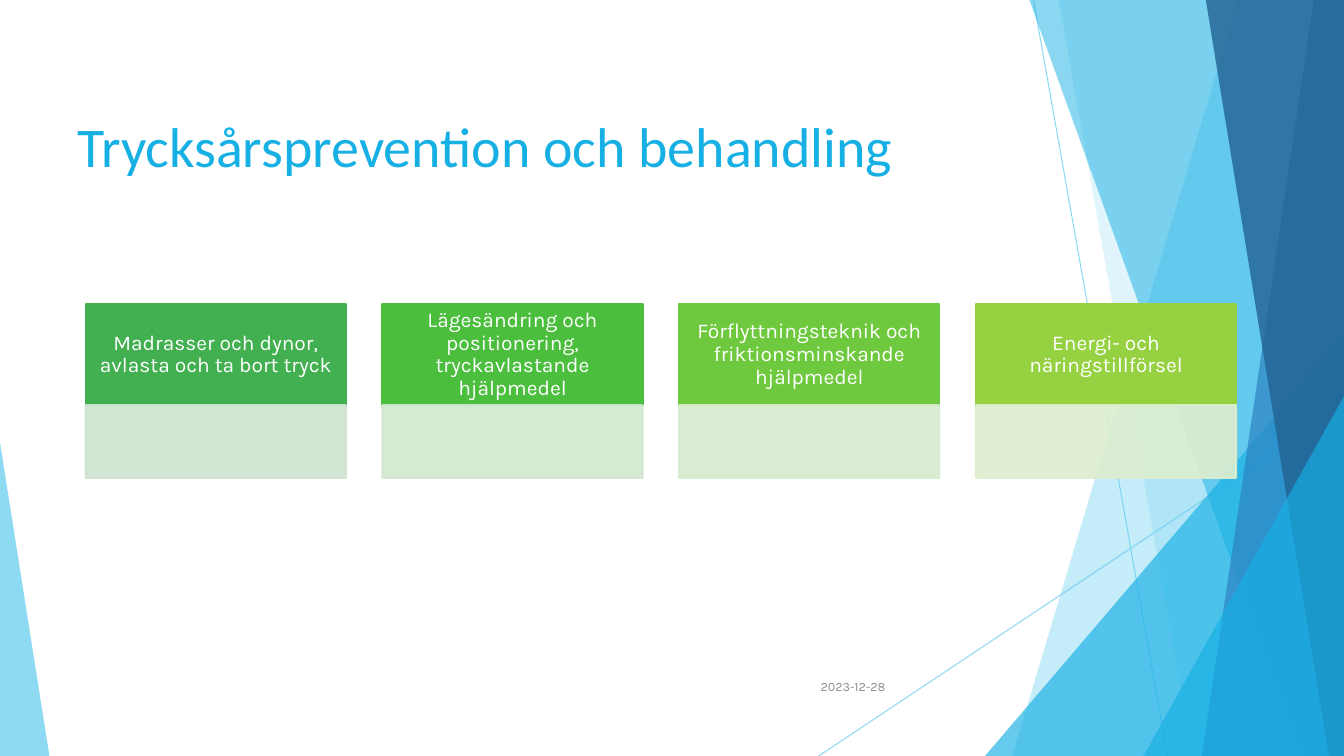
import pptx
import pptx.util
import pptx.dml.color
import pptx.enum.shapes
import pptx.enum.text
import pptx.oxml
import pptx.oxml.ns

Inches = pptx.util.Inches
Pt = pptx.util.Pt
SHAPE = pptx.enum.shapes.MSO_SHAPE
ALIGN = pptx.enum.text.PP_ALIGN
ANCHOR = pptx.enum.text.MSO_ANCHOR

W, H = 13.33, 7.5
TITLE = "Trycksårsprevention och behandling"
DATE = "2023-12-28"
COLORS = {
    "sky": "5FCBEF",
    "cyan": "17B0E4",
    "blue": "2E83C3",
    "navy": "226292",
    "white": "FFFFFF",
    "gray": "8C8C8C",
}
CARDS = [
    ("Madrasser och dynor, avlasta och ta bort tryck", "42B051", "CFE4D0"),
    ("Lägesändring och positionering, tryckavlastande hjälpmedel", "4CBE3E", "D1E7CF"),
    ("Förflyttningsteknik och friktionsminskande hjälpmedel", "6FC93F", "D6EBCF"),
    ("Energi- och näringstillförsel", "96D141", "DDEECF"),
]
RAYS = [((10.25, 0), (11.58, H)), ((W, 4.03), (8.12, H))]
# (kind, geometry, color, opacity)
FACETS = [
    ("band", (12.28, 10.04), "sky", 36),
    ("band", (10.5, 11.83), "sky", 20),
    ("triangle", (9.77, 3.33, 3.56, 1), "cyan", 66),
    ("band", (10.21, 12.91), "cyan", 50),
    ("band", (13.03, 11.92), "blue", 70),
    ("band", (11.96, 13.18), "navy", 80),
    ("triangle", (11.34, 3.93, 1.99, 1), "cyan", 66),
    ("triangle", (0, 4.39, 0.49, 0), "sky", 70),
]
CARD_LEFT, CARD_LAST, CARD_TOP, CARD_W = 0.85, 9.68, 3.02, 2.58
HEAD_H, BODY_H = 1, 0.72


def rgb(value):
    return pptx.dml.color.RGBColor.from_string(value)


def set_alpha(fill_parent, percent):
    for clr in fill_parent.iter(pptx.oxml.ns.qn("a:srgbClr")):
        alpha = clr.makeelement(pptx.oxml.ns.qn("a:alpha"), {"val": str(percent * 1000)})
        clr.append(alpha)


def paint(sp, color, opacity=100, outline=False):
    sp.shadow.inherit = False
    sp.fill.solid()
    sp.fill.fore_color.rgb = rgb(color)
    if outline:
        sp.line.color.rgb = rgb(color)
        sp.line.width = Pt(1.5)
    else:
        sp.line.fill.background()
    if opacity < 100:
        set_alpha(sp._element.spPr, opacity)


def style_text(tf, size, font, color, align):
    p = tf.paragraphs[0]
    p.alignment = align
    r = p.runs[0]
    r.font.size = Pt(size)
    r.font.name = font
    r.font.color.rgb = rgb(color)
    return p


def add_ray(shapes, start, end):
    cx = shapes.add_connector(
        pptx.enum.shapes.MSO_CONNECTOR.STRAIGHT, *map(Inches, start + end))
    cx.line.color.rgb = rgb(COLORS["sky"])
    cx.line.width = Pt(0.75)
    spPr = cx._element.spPr
    set_alpha(spPr, 70)
    spPr.append(spPr.makeelement(pptx.oxml.ns.qn("a:effectLst"), {}))


def add_facet(shapes, kind, geometry, color, opacity):
    if kind == "band":
        top_x, bottom_x = geometry
        corners = [(W, 0), (W, H), (bottom_x, H)]
        fb = shapes.build_freeform(Inches(top_x), 0)
        fb.add_line_segments([(Inches(x), Inches(y)) for x, y in corners], close=True)
        sp = fb.convert_to_shape()
    else:
        left, top, width, apex = geometry
        sp = shapes.add_shape(SHAPE.ISOSCELES_TRIANGLE, Inches(left), Inches(top),
                              Inches(width), Inches(H - top))
        sp.adjustments[0] = apex
    paint(sp, COLORS[color], opacity)


def add_card(shapes, left, text, head_color, body_color):
    head = shapes.add_shape(SHAPE.RECTANGLE, Inches(left), Inches(CARD_TOP),
                            Inches(CARD_W), Inches(HEAD_H))
    paint(head, head_color, outline=True)
    tf = head.text_frame
    tf.word_wrap = True
    tf.vertical_anchor = ANCHOR.MIDDLE
    tf.margin_left = tf.margin_right = Inches(0.12)
    tf.margin_top = tf.margin_bottom = Inches(0.07)
    tf.text = text
    p = style_text(tf, 15, "Karla", COLORS["white"], ALIGN.CENTER)
    p.line_spacing = 0.9
    body = shapes.add_shape(SHAPE.RECTANGLE, Inches(left), Inches(CARD_TOP + HEAD_H),
                            Inches(CARD_W), Inches(BODY_H))
    paint(body, body_color, 90, outline=True)


def main():
    prs = pptx.Presentation()
    prs.slide_width, prs.slide_height = Inches(W), Inches(H)
    slide = prs.slides.add_slide(prs.slide_layouts[5])
    shapes = slide.shapes

    for start, end in RAYS:
        add_ray(shapes, start, end)
    for facet in FACETS:
        add_facet(shapes, *facet)

    title = shapes.title
    shapes._spTree.append(title._element)
    title.left, title.top = Inches(0.67), Inches(1.06)
    title.width, title.height = Inches(11.98), Inches(1.48)
    tf = title.text_frame
    tf.text = TITLE
    tf.word_wrap = True
    tf.vertical_anchor = ANCHOR.TOP
    style_text(tf, 40, "Calibri", COLORS["cyan"], ALIGN.LEFT)

    pitch = (CARD_LAST - CARD_LEFT) / (len(CARDS) - 1)
    for i, card in enumerate(CARDS):
        add_card(shapes, CARD_LEFT + i * pitch, *card)

    date = shapes.add_textbox(Inches(7.88), Inches(6.61), Inches(1), Inches(0.4))
    tf = date.text_frame
    tf.word_wrap = True
    tf.vertical_anchor = ANCHOR.MIDDLE
    tf.text = DATE
    style_text(tf, 9, "Karla", COLORS["gray"], ALIGN.RIGHT)

    prs.save("out.pptx")


if __name__ == "__main__":
    main()
